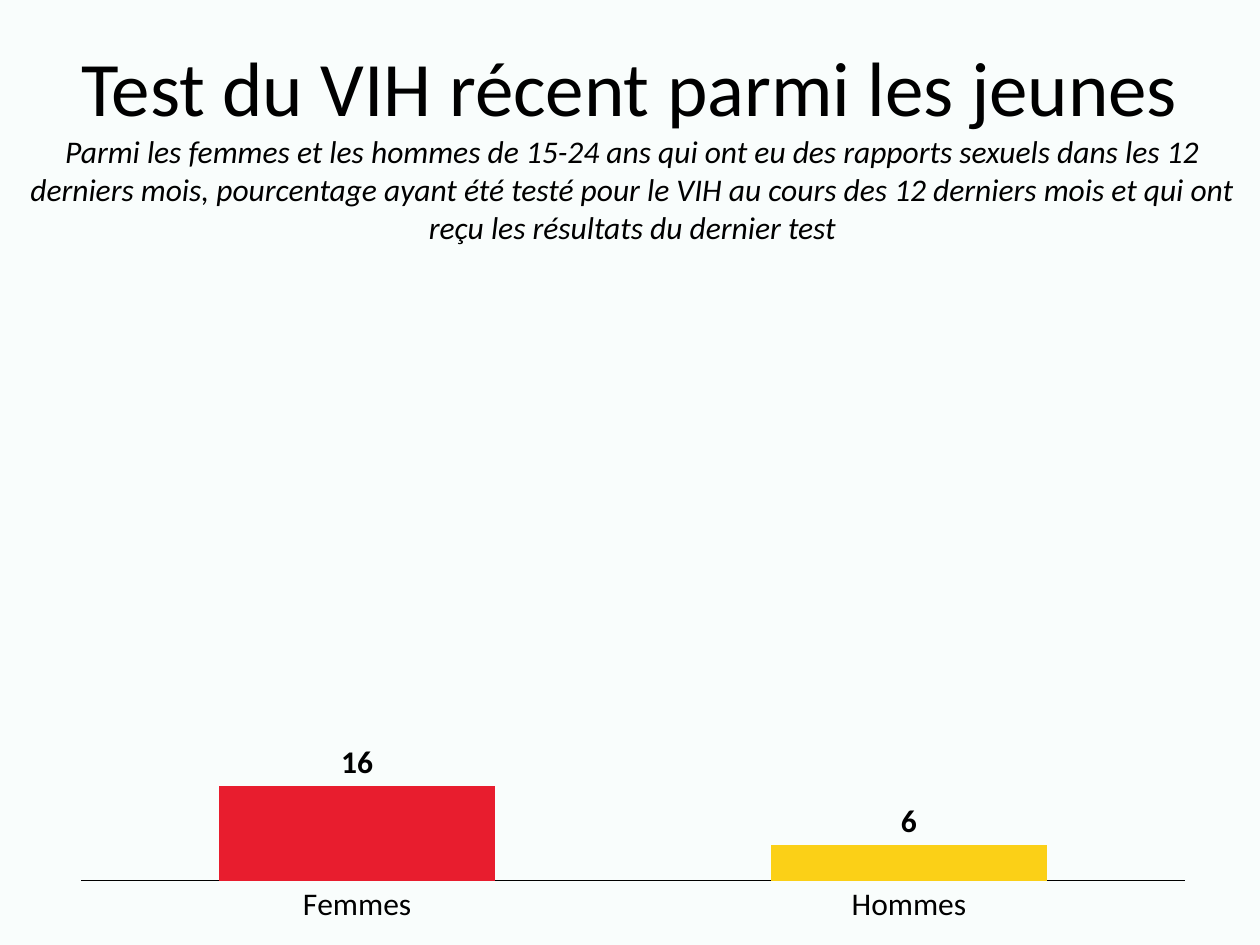
from lxml import etree
from pptx import Presentation
from pptx import util as u
from pptx.chart.data import CategoryChartData
from pptx.dml.color import RGBColor
from pptx.enum import chart as ch, text
from pptx.oxml import ns

BACKGROUND = RGBColor(0xF9, 0xFD, 0xFC)
BLACK = RGBColor(0, 0, 0)
RED = RGBColor(0xE8, 0x1D, 0x2E)
YELLOW = RGBColor(0xFB, 0xD0, 0x17)
FONT = "Calibri"


def write(frame, wording, size, italic=False, spacing=1.0, anchor=text.MSO_ANCHOR.TOP):
    frame.word_wrap = True
    frame.vertical_anchor = anchor
    paragraph = frame.paragraphs[0]
    paragraph.alignment = text.PP_ALIGN.CENTER
    paragraph.line_spacing = spacing
    run = paragraph.add_run()
    run.text = wording
    run.font.name = FONT
    run.font.size = u.Pt(size)
    run.font.italic = italic
    run.font.color.rgb = BLACK


def style(font, size, bold=False):
    font.name = FONT
    font.size = u.Pt(size)
    font.bold = bold
    font.color.rgb = BLACK


deck = Presentation()
deck.slide_width, deck.slide_height = u.Inches(10), u.Inches(7.5)
slide = deck.slides.add_slide(deck.slide_layouts[5])
slide.background.fill.solid()
slide.background.fill.fore_color.rgb = BACKGROUND

title = slide.shapes.title
title.left, title.top = u.Inches(0), u.Inches(0)
title.width, title.height = u.Inches(10), u.Inches(1.45)
write(title.text_frame, "Test du VIH récent parmi les jeunes", 44,
      spacing=0.9, anchor=text.MSO_ANCHOR.MIDDLE)

test_rates = CategoryChartData()
test_rates.categories = ["Femmes", "Hommes"]
test_rates.add_series("Series 1", [16, 6])
chart = slide.shapes.add_chart(
    ch.XL_CHART_TYPE.COLUMN_CLUSTERED,
    u.Inches(0.51), u.Inches(1.85), u.Inches(9.03), u.Inches(5.65), test_rates).chart
chart.has_legend = False
chart.has_title = False
style(chart.font, 10)

sexes = chart.category_axis
sexes.major_tick_mark = ch.XL_TICK_MARK.NONE
sexes.format.line.color.rgb = BLACK
sexes.format.line.width = u.Pt(0.75)
style(sexes.tick_labels.font, 18)

percentages = chart.value_axis
percentages.minimum_scale = 0
percentages.maximum_scale = 100
percentages.has_major_gridlines = False
percentages.visible = False

columns = chart.plots[0]
columns.gap_width = 100
columns.vary_by_categories = False
columns.has_data_labels = True
rate_labels = columns.data_labels
rate_labels.show_value = True
rate_labels.position = ch.XL_LABEL_POSITION.OUTSIDE_END
style(rate_labels.font, 18, bold=True)
for index, color in enumerate([RED, YELLOW]):
    column_fill = columns.series[0].points[index].format.fill
    column_fill.solid()
    column_fill.fore_color.rgb = color

plot_area = chart.element.find(".//" + ns.qn("c:plotArea"))
layout = plot_area.find(ns.qn("c:layout"))
if layout is None:
    layout = etree.Element(ns.qn("c:layout"))
    plot_area.insert(0, layout)
manual = etree.SubElement(layout, ns.qn("c:manualLayout"))
for tag, value in [("layoutTarget", "inner"), ("xMode", "edge"), ("yMode", "edge"),
                   ("x", "0.015"), ("y", "0.08"), ("w", "0.97"), ("h", "0.83")]:
    etree.SubElement(manual, ns.qn("c:" + tag)).set("val", value)

definition = slide.shapes.add_textbox(u.Inches(0.02), u.Inches(1), u.Inches(10), u.Inches(1.01))
write(definition.text_frame,
      "Parmi les femmes et les hommes de 15-24 ans qui ont eu des rapports sexuels "
      "dans les 12 derniers mois, pourcentage ayant été testé pour le VIH au cours "
      "des 12 derniers mois et qui ont reçu les résultats du dernier test",
      18, italic=True)
definition.text_frame.auto_size = text.MSO_AUTO_SIZE.SHAPE_TO_FIT_TEXT

deck.save("out.pptx")
